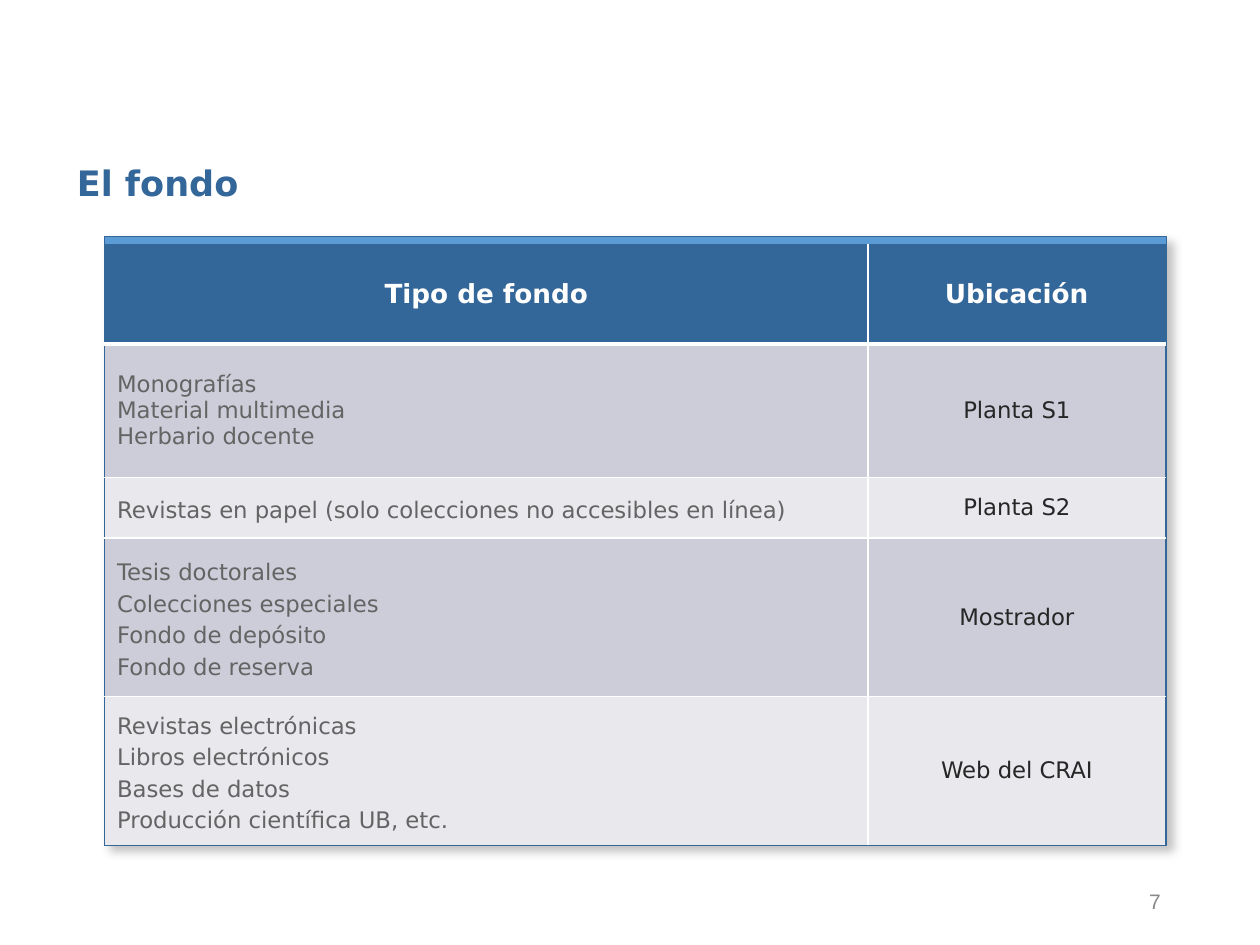
from dataclasses import dataclass
from typing import Optional

import pptx
import pptx.dml.color
import pptx.enum.shapes
import pptx.enum.text
import pptx.oxml
import pptx.oxml.ns
import pptx.util

Inches = pptx.util.Inches
Pt = pptx.util.Pt
RGBColor = pptx.dml.color.RGBColor
Align = pptx.enum.text.PP_ALIGN
Anchor = pptx.enum.text.MSO_ANCHOR

BLUE = RGBColor(0x33, 0x66, 0x99)
LIGHT_BLUE = RGBColor(0x5B, 0x9B, 0xD5)
WHITE = RGBColor(0xFF, 0xFF, 0xFF)
GRAY = RGBColor(0x64, 0x64, 0x64)
DARK = RGBColor(0x26, 0x26, 0x26)
NUMBER_GRAY = RGBColor(0x89, 0x89, 0x89)
BANDS = (RGBColor(0xCD, 0xCD, 0xDA), RGBColor(0xE8, 0xE8, 0xED))
FONT = "DejaVu Sans"

TABLE_LEFT, TABLE_TOP = 0.83, 1.94
COLUMN_WIDTHS = (6.06, 2.36)
HEADERS = ("Tipo de fondo", "Ubicación")
HEADER_HEIGHT = 0.79
OUTER_WIDTH, INNER_WIDTH, HEADER_RULE_WIDTH = 0.5, 1, 3


@dataclass
class Holding:
    kinds: list[str]
    location: str
    height: float
    line_spacing: Optional[pptx.util.Length] = Pt(18)
    hanging: float = 0


HOLDINGS = [
    Holding(["Monografías", "Material multimedia", "Herbario docente"],
            "Planta S1", 1.06, line_spacing=None),
    Holding(["Revistas en papel (solo colecciones no accesibles en línea)"],
            "Planta S2", 0.48),
    Holding(["Tesis doctorales", "Colecciones especiales", "Fondo de depósito",
             "Fondo de reserva"], "Mostrador", 1.26, hanging=0.67),
    Holding(["Revistas electrónicas", "Libros electrónicos", "Bases de datos",
             "Producción científica UB, etc."], "Web del CRAI", 1.18),
]


def write_text(text_frame, lines: list[str], *, size: float, color: RGBColor,
               font: str = FONT, bold: bool = False, align=Align.LEFT,
               line_spacing=None, hanging: float = 0) -> None:
    for index, line in enumerate(lines):
        paragraph = text_frame.paragraphs[0] if index == 0 else text_frame.add_paragraph()
        paragraph.alignment = align
        if line_spacing is not None:
            paragraph.line_spacing = line_spacing
        if hanging:
            properties = paragraph._p.get_or_add_pPr()
            properties.set("marL", str(Inches(hanging)))
            properties.set("indent", str(-Inches(hanging)))
        run = paragraph.add_run()
        run.text = line
        run.font.name = font
        run.font.size = Pt(size)
        run.font.bold = bold
        run.font.color.rgb = color


def set_borders(cell, row: int, column: int) -> None:
    """Blue outside the table, white inside, with a thick rule under the header."""
    last_row, last_column = len(HOLDINGS), len(COLUMN_WIDTHS) - 1
    outer, inner = (BLUE, OUTER_WIDTH), (WHITE, INNER_WIDTH)
    header_rule = (WHITE, HEADER_RULE_WIDTH)
    borders = {
        "lnL": outer if column == 0 else inner,
        "lnR": outer if column == last_column else inner,
        "lnT": outer if row == 0 else header_rule if row == 1 else inner,
        "lnB": header_rule if row == 0 else outer if row == last_row else inner,
    }
    properties = cell._tc.get_or_add_tcPr()
    for position, (tag, (color, width)) in enumerate(borders.items()):
        properties.insert(position, pptx.oxml.parse_xml(
            f'<a:{tag} {pptx.oxml.ns.nsdecls("a")} w="{Pt(width)}">'
            f'<a:solidFill><a:srgbClr val="{color}"/></a:solidFill></a:{tag}>'))


def add_holdings_table(slide) -> None:
    heights = [HEADER_HEIGHT] + [holding.height for holding in HOLDINGS]
    table = slide.shapes.add_table(
        len(heights), len(COLUMN_WIDTHS), Inches(TABLE_LEFT), Inches(TABLE_TOP),
        Inches(sum(COLUMN_WIDTHS)), Inches(sum(heights))).table
    for column, width in zip(table.columns, COLUMN_WIDTHS):
        column.width = Inches(width)
    for row, height in zip(table.rows, heights):
        row.height = Inches(height)

    for column, header in enumerate(HEADERS):
        write_text(table.cell(0, column).text_frame, [header], size=15,
                   color=WHITE, bold=True, align=Align.CENTER)
    for row, holding in enumerate(HOLDINGS, start=1):
        write_text(table.cell(row, 0).text_frame, holding.kinds, size=13, color=GRAY,
                   line_spacing=holding.line_spacing, hanging=holding.hanging)
        write_text(table.cell(row, 1).text_frame, [holding.location], size=13,
                   color=DARK, align=Align.CENTER)

    for row in range(len(heights)):
        for column in range(len(COLUMN_WIDTHS)):
            cell = table.cell(row, column)
            cell.vertical_anchor = Anchor.MIDDLE
            cell.fill.solid()
            cell.fill.fore_color.rgb = BANDS[(row - 1) % 2] if row else BLUE
            set_borders(cell, row, column)


def add_backdrop(slide) -> None:
    """Shadowed panel whose top edge shows above the table."""
    panel = slide.shapes.add_shape(
        pptx.enum.shapes.MSO_SHAPE.RECTANGLE, Inches(TABLE_LEFT), Inches(1.88),
        Inches(8.43), Inches(4.83))
    panel.fill.solid()
    panel.fill.fore_color.rgb = LIGHT_BLUE
    panel.line.color.rgb = BLUE
    panel.line.width = Pt(OUTER_WIDTH)
    panel.shadow.inherit = False
    effects = panel._element.spPr.find(pptx.oxml.ns.qn("a:effectLst"))
    effects.append(pptx.oxml.parse_xml(
        f'<a:outerShdw {pptx.oxml.ns.nsdecls("a")} blurRad="{Pt(5)}" dist="{Pt(5)}" '
        f'dir="{45 * 60000}" algn="tl" rotWithShape="0"><a:srgbClr val="{GRAY}">'
        '<a:alpha val="40000"/></a:srgbClr></a:outerShdw>'))


def add_title(slide) -> None:
    title = slide.shapes.title
    title.left, title.top = Inches(0.51), Inches(1.27)
    title.width, title.height = Inches(8.9), Inches(0.43)
    title.text_frame.vertical_anchor = Anchor.TOP
    title.text_frame.auto_size = pptx.enum.text.MSO_AUTO_SIZE.SHAPE_TO_FIT_TEXT
    write_text(title.text_frame, ["El fondo"], size=20, color=BLUE, bold=True,
               line_spacing=0.9)


def add_page_number(slide) -> None:
    box = slide.shapes.add_textbox(Inches(7.06), Inches(6.95), Inches(2.25), Inches(0.4))
    box.text_frame.word_wrap = True
    box.text_frame.vertical_anchor = Anchor.MIDDLE
    write_text(box.text_frame, ["7"], size=12, color=NUMBER_GRAY, font="Arial",
               align=Align.RIGHT)


def main() -> None:
    presentation = pptx.Presentation()
    presentation.slide_width, presentation.slide_height = Inches(10), Inches(7.5)
    slide = presentation.slides.add_slide(presentation.slide_layouts[5])
    add_backdrop(slide)
    add_page_number(slide)
    add_title(slide)
    add_holdings_table(slide)
    presentation.save("out.pptx")


if __name__ == "__main__":
    main()
